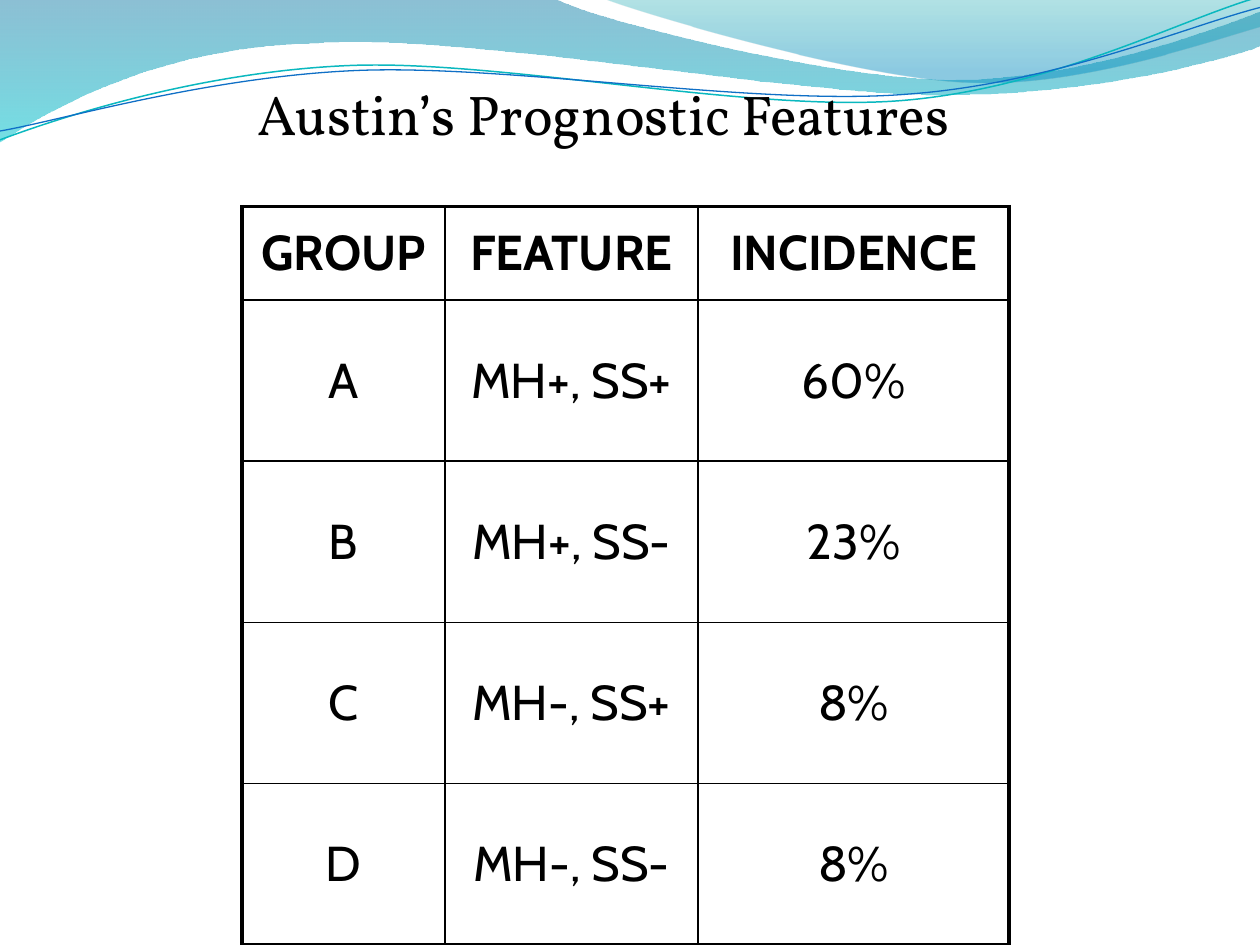
import math

from lxml import etree
from pptx import Presentation
from pptx.dml.color import RGBColor
from pptx.enum import text
from pptx.oxml.ns import qn
from pptx.util import Inches, Pt

BLACK = RGBColor(0x00, 0x00, 0x00)
DEEP_BLUE = RGBColor(0x00, 0x74, 0xA1)
CYAN = RGBColor(0x00, 0xC6, 0xCF)
TEAL = RGBColor(0x00, 0xA1, 0xA9)
SKY = RGBColor(0x00, 0x8B, 0xBF)
LINE_TEAL = RGBColor(0x0A, 0xB8, 0xBF)
LINE_BLUE = RGBColor(0x0F, 0x6F, 0xC6)
TILT = 2.7  # degrees the thin lines are turned to the left

prs = Presentation()
prs.slide_width, prs.slide_height = Inches(10), Inches(7.5)
s = prs.slides.add_slide(prs.slide_layouts[5])


def add_wave(path, closed):
    """Draw a path whose items are points (1 pair) or cubic curves (3 pairs)."""
    pts = [(Inches(x), Inches(y)) for item in path for x, y in item]
    fb = s.shapes.build_freeform(*pts[0])
    fb.add_line_segments(pts[1:], close=closed)
    sp = fb.convert_to_shape()
    sp.shadow.inherit = False
    # Join each three points of a curve into one Bezier segment
    segments = iter(list(sp._element.iter(qn("a:lnTo"))))
    for item in path[1:]:
        first = next(segments)
        if len(item) == 3:
            first.addprevious(curve := etree.Element(qn("a:cubicBezTo")))
            for seg in (first, next(segments), next(segments)):
                curve.append(seg[0])
                seg.getparent().remove(seg)
    return sp


# Filled waves: path, then (position, colour, opacity in percent) per stop
bands = [
    ([[(0, 0)], [(4.4, -0.01)],
      [(4.76, 0.17), (6.64, 0.63), (7.58, 0.63)],
      [(8.53, 0.63), (9.58, 0.26), (10, 0.09)], [(10.01, 0.36)],
      [(9.83, 0.44), (8.7, 0.76), (7.46, 0.75)],
      [(6.22, 0.75), (3.82, 0.28), (2.57, 0.34)],
      [(1.29, 0.36), (0.46, 0.83), (-0.01, 1.13)], [(0, 0)]],
     [(0, DEEP_BLUE, 45), (1, CYAN, 55)]),
    ([[(4.79, -0.01)],
      [(5.09, 0.11), (6.82, 0.62), (7.69, 0.65)],
      [(8.56, 0.69), (9.61, 0.32), (10, 0.21)], [(10, 0)], [(4.79, -0.01)]],
     [(0, TEAL, 30), (0.8, SKY, 45)]),
]
for path, stops in bands:
    sp = add_wave(path, True)
    sp.line.fill.background()
    sp.fill.gradient()
    sp.fill.gradient_angle = 270
    for stop, (pos, color, _) in zip(sp.fill.gradient_stops, stops):
        stop.position = pos
        stop.color.rgb = color
    colors = list(sp._element.spPr.iter(qn("a:srgbClr")))
    for clr, (_, _, opacity) in zip(colors, stops):
        etree.SubElement(clr, qn("a:alpha"), val=str(opacity * 1000))

# Thin wave lines: path, centre, colour, width
strands = [
    ([[(0, 1.11)], [(0.48, 0.93), (1.58, 0.57), (2.77, 0.52)],
      [(3.95, 0.47), (5.93, 0.89), (7.13, 0.8)],
      [(8.33, 0.71), (9.38, 0.15), (9.98, -0.02)]], (4.99, 0.58), LINE_TEAL, 0.85),
    ([[(0, 1.04)], [(0.47, 0.96), (1.64, 0.61), (2.83, 0.56)],
      [(4.03, 0.51), (5.97, 0.84), (7.17, 0.75)],
      [(8.36, 0.67), (9.41, 0.21), (10, 0.06)]], (5, 0.59), LINE_BLUE, 0.75),
]
cos, sin = math.cos(math.radians(TILT)), math.sin(math.radians(TILT))
for path, (cx, cy), color, width in strands:
    # Level the path about its centre, then turn the whole shape
    level = [[(cx + (x - cx) * cos - (y - cy) * sin, cy + (x - cx) * sin + (y - cy) * cos)
              for x, y in item] for item in path]
    sp = add_wave(level, False)
    sp.rotation = 360 - TILT
    sp.fill.background()
    sp.line.color.rgb = color
    sp.line.width = Pt(width)


def set_border(cell, side, width):
    ln = etree.SubElement(cell._tc.get_or_add_tcPr(), qn("a:ln" + side), w=str(Pt(width)))
    fill = etree.SubElement(ln, qn("a:solidFill"))
    etree.SubElement(fill, qn("a:srgbClr"), val=str(BLACK))


# Table
rows = [
    ("GROUP", "FEATURE", "INCIDENCE"),
    ("A", "MH+, SS+", "60%"),
    ("B", "MH+, SS-", "23%"),
    ("C", "MH-, SS+", "8%"),
    ("D", "MH-, SS-", "8%"),
]
col_widths = [1.61, 2.01, 2.47]
row_heights = [0.74] + [1.28] * 4
tbl = s.shapes.add_table(len(rows), len(col_widths), Inches(1.92), Inches(1.64),
                         Inches(sum(col_widths)), Inches(sum(row_heights))).table
tbl.horz_banding = False
for col, width in zip(tbl.columns, col_widths):
    col.width = Inches(width)
for row, height in zip(tbl.rows, row_heights):
    row.height = Inches(height)
last_row, last_col = len(rows) - 1, len(col_widths) - 1
for i, row in enumerate(rows):
    for j, label in enumerate(row):
        cell = tbl.cell(i, j)
        cell.vertical_anchor = text.MSO_ANCHOR.MIDDLE
        # Thick outer frame, thin inner rules
        for side, outer in (("L", j == 0), ("R", j == last_col),
                            ("T", i == 0), ("B", i == last_row)):
            set_border(cell, side, 2.25 if outer else 1)
        cell.fill.background()
        p = cell.text_frame.paragraphs[0]
        p.alignment = text.PP_ALIGN.CENTER
        r = p.add_run()
        r.text = label
        r.font.name = "Cabin"
        r.font.size = Pt(28)
        r.font.bold = i == 0
        r.font.color.rgb = BLACK

# Title, in front of the waves
title = s.shapes.title
title.left, title.top = Inches(1.83), Inches(0.58)
title.width, title.height = Inches(5.92), Inches(0.63)
s.shapes._spTree.append(title._element)
tf = title.text_frame
tf.word_wrap = True
tf.auto_size = text.MSO_AUTO_SIZE.SHAPE_TO_FIT_TEXT
tf.vertical_anchor = text.MSO_ANCHOR.TOP
p = tf.paragraphs[0]
p.alignment = text.PP_ALIGN.CENTER
r = p.add_run()
r.text = "Austin’s Prognostic Features"
r.font.name = "Vollkorn"
r.font.size = Pt(32)
r.font.color.rgb = BLACK

prs.save("out.pptx")
